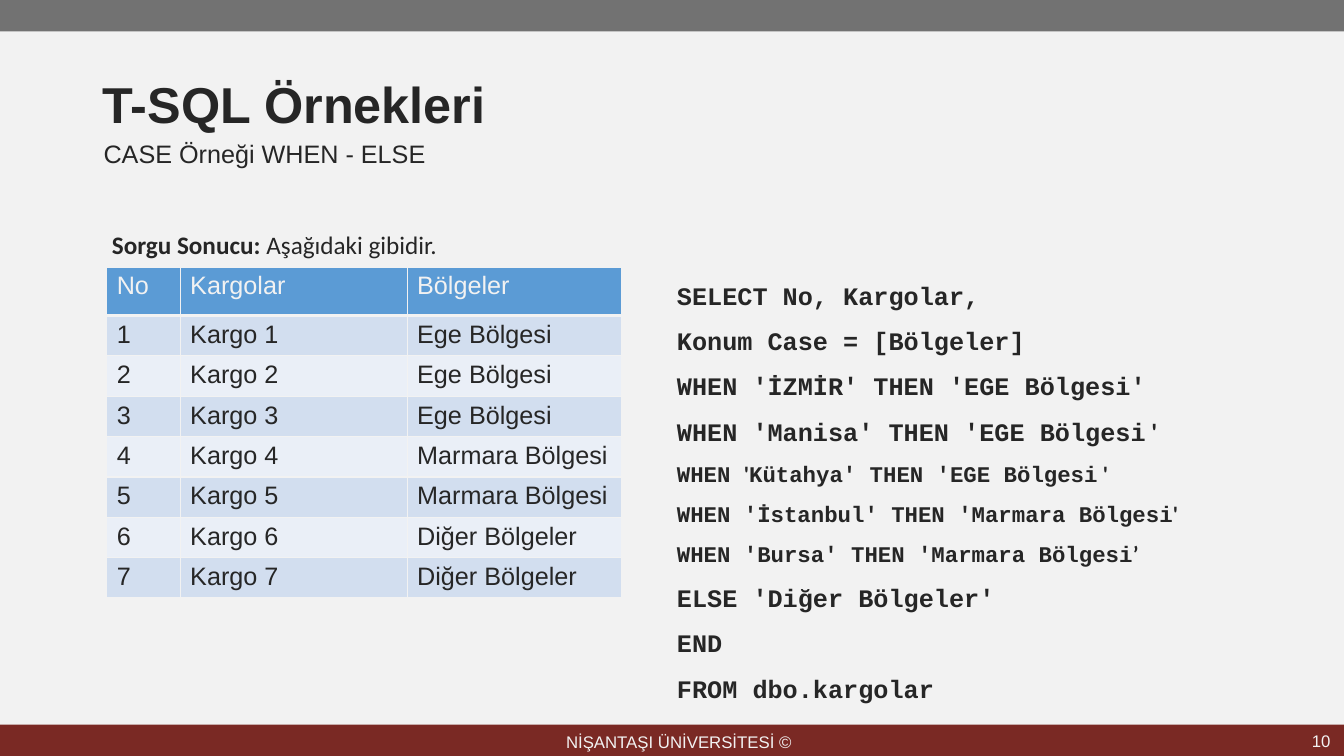
from dataclasses import dataclass

from lxml import etree
from pptx import Presentation
from pptx import util as u
from pptx.dml.color import RGBColor
from pptx.enum import shapes, text
from pptx.oxml import ns

PAPER = RGBColor(0xF2, 0xF2, 0xF2)
INK = RGBColor(0x26, 0x26, 0x26)
GREY = RGBColor(0x72, 0x72, 0x72)
MAROON = RGBColor(0x7A, 0x29, 0x24)
HEADER_BLUE = RGBColor(0x5B, 0x9B, 0xD5)
BAND_DARK = RGBColor(0xD2, 0xDE, 0xEF)
BAND_LIGHT = RGBColor(0xEA, 0xEF, 0xF7)
SLIDE_WIDTH, SLIDE_HEIGHT, BAR_HEIGHT = 33.87, 19.05, 0.79
ALIGN = text.PP_ALIGN
ANCHOR = text.MSO_ANCHOR


@dataclass(frozen=True)
class Box:
    left: float
    top: float
    width: float
    height: float

    def lengths(self) -> tuple:
        return tuple(u.Cm(n) for n in (self.left, self.top, self.width, self.height))


@dataclass(frozen=True)
class Run:
    text: str
    font: str = "Arial"
    bold: bool = False


@dataclass(frozen=True)
class Line:
    runs: tuple[Run, ...]
    size: int = 18
    color: RGBColor = INK
    align: ALIGN | None = ALIGN.JUSTIFY
    spacing: float = 1.0


@dataclass(frozen=True)
class Label:
    box: Box
    lines: tuple[Line, ...]
    anchor: ANCHOR = ANCHOR.TOP
    wrap: bool = True


def mono(content: str) -> Run:
    return Run(content, "Courier New", True)


def quote(content: str) -> Run:
    return Run(content, "Calibri", True)


def code(*runs: Run, size: int = 18) -> Line:
    return Line(runs, size, spacing=1.5)


BARS = (
    (Box(0, 0, SLIDE_WIDTH, BAR_HEIGHT), GREY),
    (Box(0, SLIDE_HEIGHT - BAR_HEIGHT, SLIDE_WIDTH, BAR_HEIGHT), MAROON),
)
TITLE = Label(Box(2.34, 1.93, 29.54, 1.52),
              (Line((Run("T-SQL Örnekleri", bold=True),), 36, align=ALIGN.LEFT, spacing=0.9),),
              ANCHOR.MIDDLE)
QUERY = (
    code(mono("SELECT No, Kargolar,")),
    code(mono("Konum Case = [Bölgeler]")),
    code(mono("WHEN 'İZMİR' THEN 'EGE Bölgesi'")),
    code(mono("WHEN 'Manisa' THEN 'EGE Bölgesi"), quote(" '")),
    code(mono("WHEN "), quote("'"), mono("Kütahya' THEN 'EGE Bölgesi"), quote(" '"), size=16),
    code(mono("WHEN 'İstanbul' THEN 'Marmara Bölgesi"), quote("'"), size=16),
    code(mono("WHEN 'Bursa' THEN 'Marmara Bölgesi"), quote("’"), size=16),
    code(mono("ELSE 'Diğer Bölgeler'")),
    code(mono("END")),
    code(mono("FROM dbo.kargolar")),
)
LABELS = (
    Label(Box(14, 18.24, 6.22, 0.89),
          (Line((Run("NİŞANTAŞI ÜNİVERSİTESİ ©"),), 12, PAPER, ALIGN.CENTER),), ANCHOR.MIDDLE),
    Label(Box(25.96, 18.19, 7.82, 0.97),
          (Line((Run("10"),), 12, PAPER, ALIGN.RIGHT),), ANCHOR.MIDDLE),
    Label(Box(2.36, 3.35, 23.6, 1.02), (Line((Run("CASE Örneği WHEN - ELSE"),)),)),
    Label(Box(2.57, 5.28, 8.89, 1.3),
          (Line((quote("Sorgu Sonucu: "), Run("Aşağıdaki gibidir.", "Calibri")), spacing=1.5),),
          wrap=False),
    Label(Box(16.81, 6.55, 15.67, 11.28), QUERY),
)
REGIONS = ("Ege Bölgesi",) * 3 + ("Marmara Bölgesi",) * 2 + ("Diğer Bölgeler",) * 2
CARGO_ROWS = [("No", "Kargolar", "Bölgeler")] + [
    (str(number), f"Kargo {number}", region) for number, region in enumerate(REGIONS, 1)
]
COLUMN_WIDTHS = (1.85, 5.72, 5.41)
HEADER_HEIGHT, ROW_HEIGHT = 1.22, 0.96


def write_lines(frame, label: Label) -> None:
    frame.word_wrap = label.wrap
    frame.vertical_anchor = label.anchor
    for index, line in enumerate(label.lines):
        paragraph = frame.add_paragraph() if index else frame.paragraphs[0]
        paragraph.alignment = line.align
        paragraph.line_spacing = line.spacing
        paragraph.font.size = u.Pt(line.size)
        paragraph.font.color.rgb = line.color
        for part in line.runs:
            run = paragraph.add_run()
            run.text = part.text
            run.font.name = part.font
            run.font.bold = part.bold
            run.font.size = u.Pt(line.size)
            run.font.color.rgb = line.color


def add_bar(slide, box: Box, color: RGBColor) -> None:
    bar = slide.shapes.add_shape(shapes.MSO_SHAPE.RECTANGLE, *box.lengths())
    bar.shadow.inherit = False
    bar.fill.solid()
    bar.fill.fore_color.rgb = color
    bar.line.fill.background()


def set_borders(cell, bottom_width: float) -> None:
    properties = cell._tc.get_or_add_tcPr()
    widths = {"lnL": 1, "lnR": 1, "lnT": 1, "lnB": bottom_width}
    for index, (side, width) in enumerate(widths.items()):
        border = etree.Element(ns.qn(f"a:{side}"), w=str(u.Pt(width)))
        fill = etree.SubElement(border, ns.qn("a:solidFill"))
        etree.SubElement(fill, ns.qn("a:srgbClr"), val=str(PAPER))
        properties.insert(index, border)


def add_cargo_table(slide) -> None:
    height = HEADER_HEIGHT + ROW_HEIGHT * len(REGIONS)
    box = Box(2.69, 6.73, sum(COLUMN_WIDTHS), height)
    table = slide.shapes.add_table(len(CARGO_ROWS), len(COLUMN_WIDTHS), *box.lengths()).table
    for column, width in zip(table.columns, COLUMN_WIDTHS):
        column.width = u.Cm(width)
    for row_index, values in enumerate(CARGO_ROWS):
        is_header = row_index == 0
        table.rows[row_index].height = u.Cm(HEADER_HEIGHT if is_header else ROW_HEIGHT)
        band = BAND_DARK if row_index % 2 else BAND_LIGHT
        for column_index, value in enumerate(values):
            cell = table.cell(row_index, column_index)
            cell.fill.solid()
            cell.fill.fore_color.rgb = HEADER_BLUE if is_header else band
            cell.text = value
            font = cell.text_frame.paragraphs[0].font
            font.name, font.size, font.bold = "Arial", u.Pt(18), False
            font.color.rgb = PAPER if is_header else INK
            set_borders(cell, 3 if is_header else 1)


def main() -> None:
    """Build the T-SQL CASE example slide and save it."""
    presentation = Presentation()
    presentation.slide_width = u.Cm(SLIDE_WIDTH)
    presentation.slide_height = u.Cm(SLIDE_HEIGHT)
    slide = presentation.slides.add_slide(presentation.slide_layouts[5])
    slide.background.fill.solid()
    slide.background.fill.fore_color.rgb = PAPER
    for box, color in BARS:
        add_bar(slide, box, color)
    title = slide.shapes.title
    title.left, title.top, title.width, title.height = TITLE.box.lengths()
    write_lines(title.text_frame, TITLE)
    for label in LABELS:
        write_lines(slide.shapes.add_textbox(*label.box.lengths()).text_frame, label)
    add_cargo_table(slide)
    presentation.save("out.pptx")


if __name__ == "__main__":
    main()
